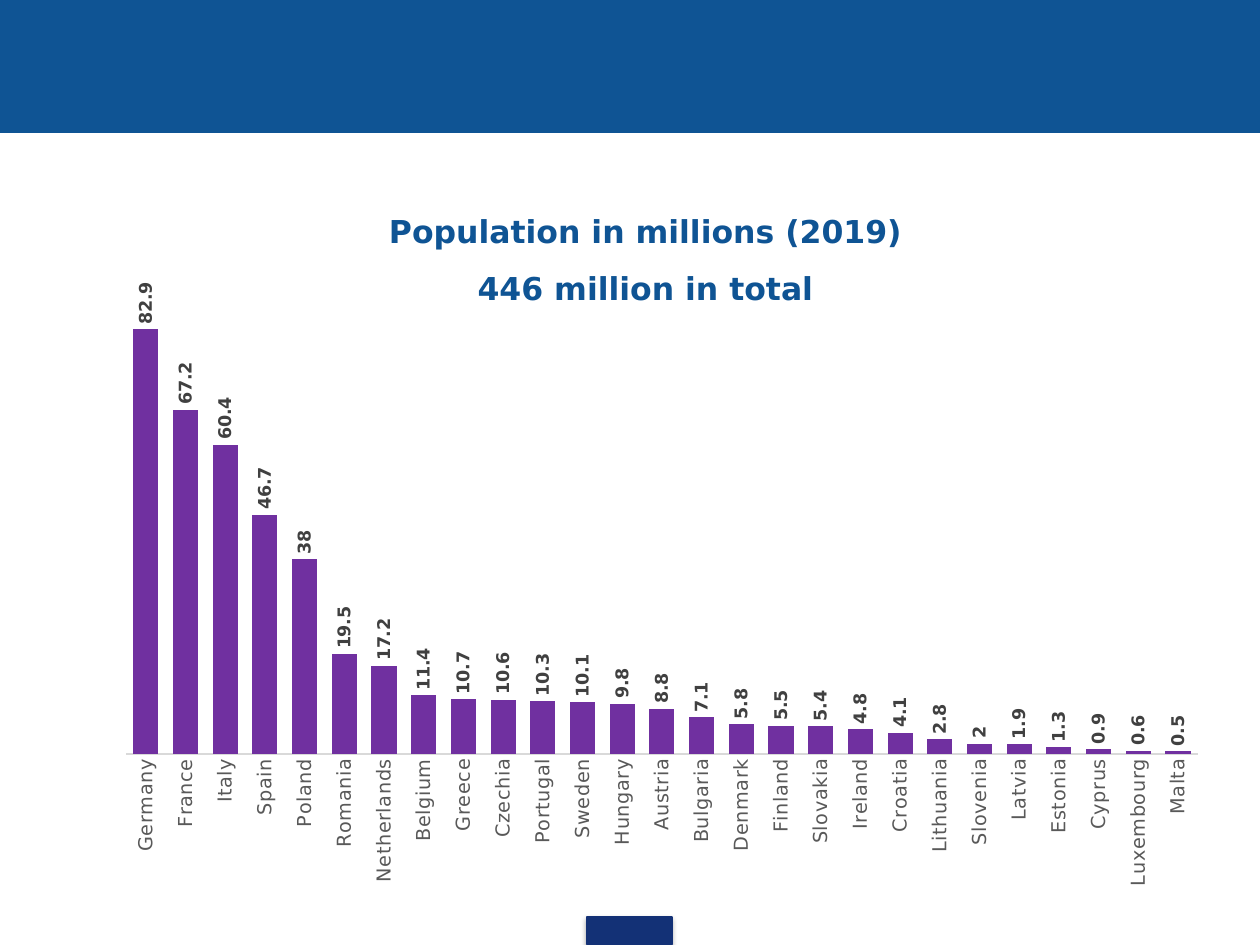
from lxml.etree import SubElement
from pptx import Presentation
from pptx.chart.data import CategoryChartData
from pptx.dml.color import RGBColor
from pptx.enum.chart import XL_CHART_TYPE as ChartType
from pptx.enum.chart import XL_LABEL_POSITION as LabelPosition
from pptx.enum.chart import XL_TICK_MARK as TickMark
from pptx.enum.shapes import MSO_SHAPE as Shape
from pptx.enum.text import MSO_ANCHOR as Anchor
from pptx.enum.text import PP_ALIGN as Align
from pptx.oxml import parse_xml
from pptx.oxml.ns import nsdecls, qn
from pptx.util import Emu, Pt

PX = 914400 // 126
FONT = "DejaVu Sans"
BLUE, NAVY, PURPLE = "0F5494", "133176", "7030A0"
CHART_AREA = (103, 280, 1118, 616)
PLOT_AREA = (126, 293, 1072, 461)
TITLE = ("Population in millions (2019)", "446 million in total")
POPULATION = {
    "Germany": 82.9, "France": 67.2, "Italy": 60.4, "Spain": 46.7,
    "Poland": 38, "Romania": 19.5, "Netherlands": 17.2, "Belgium": 11.4,
    "Greece": 10.7, "Czechia": 10.6, "Portugal": 10.3, "Sweden": 10.1,
    "Hungary": 9.8, "Austria": 8.8, "Bulgaria": 7.1, "Denmark": 5.8,
    "Finland": 5.5, "Slovakia": 5.4, "Ireland": 4.8, "Croatia": 4.1,
    "Lithuania": 2.8, "Slovenia": 2, "Latvia": 1.9, "Estonia": 1.3,
    "Cyprus": 0.9, "Luxembourg": 0.6, "Malta": 0.5,
}


def px(*lengths):
    """Turn pixel lengths into EMU."""
    return [Emu(length * PX) for length in lengths]


def color(value):
    """Turn a hex string into a colour."""
    return RGBColor.from_string(value)


def apply(target, **values):
    """Set each given attribute on the target."""
    for name, value in values.items():
        setattr(target, name, value)


def style_font(font, size, fill, bold=False):
    """Give a font the deck's typeface, a size, a colour and a weight."""
    apply(font, name=FONT, size=Pt(size), bold=bold)
    font.color.rgb = color(fill)


def add_block(page, bounds, fill):
    """Add a plain filled rectangle."""
    block = page.shapes.add_shape(Shape.RECTANGLE, *px(*bounds))
    block.shadow.inherit = False
    block.fill.solid()
    block.fill.fore_color.rgb = color(fill)
    block.line.color.rgb = color(fill)
    block.line.width = Pt(0.75)
    return block


def add_shadow(block):
    """Cast a soft black shadow below a block."""
    effects = block.fill._xPr.find(qn("a:effectLst"))
    effects.append(parse_xml(
        f'<a:outerShdw {nsdecls("a")} blurRad="{Pt(3.1)}" dist="{Pt(1.8)}" '
        'dir="5400000" rotWithShape="0"><a:srgbClr val="000000">'
        '<a:alpha val="35000"/></a:srgbClr></a:outerShdw>'))


def add_title(page, bounds, lines):
    """Add the centred heading, one paragraph per line."""
    box = page.shapes.add_textbox(*px(*bounds))
    frame = box.text_frame
    apply(frame, word_wrap=True, vertical_anchor=Anchor.MIDDLE,
          margin_top=0, margin_bottom=0)
    for index, line in enumerate(lines):
        para = frame.add_paragraph() if index else frame.paragraphs[0]
        apply(para, alignment=Align.CENTER, line_spacing=1.5)
        para._p.get_or_add_pPr().set("marL", str(px(49)[0]))
        span = para.add_run()
        span.text = line
        style_font(span.font, 18, BLUE, True)


def rotate_text(element):
    """Turn chart text to read upwards."""
    body = element.find(qn("c:txPr")).find(qn("a:bodyPr"))
    for name, value in {"rot": "-5400000", "vert": "horz"}.items():
        body.set(name, value)


def place_plot(chart):
    """Fix the inner plot area inside the chart."""
    plot_area = chart._chartSpace.chart.plotArea
    for old in plot_area.findall(qn("c:layout")):
        plot_area.remove(old)
    layout = parse_xml(f'<c:layout {nsdecls("c")}/>')
    plot_area.insert(0, layout)
    manual = SubElement(layout, qn("c:manualLayout"))
    left, top, width, height = CHART_AREA
    x, y, w, h = PLOT_AREA
    values = {"layoutTarget": "inner", "xMode": "edge", "yMode": "edge",
              "x": (x - left) / width, "y": (y - top) / height,
              "w": w / width, "h": h / height}
    for name, value in values.items():
        SubElement(manual, qn(f"c:{name}")).set("val", str(value))


def style_axes(chart):
    """Show only the country axis, with upright names."""
    apply(chart.value_axis, visible=False, has_major_gridlines=False,
          minimum_scale=0, maximum_scale=90)
    axis = chart.category_axis
    apply(axis, major_tick_mark=TickMark.NONE, minor_tick_mark=TickMark.NONE)
    axis.format.line.color.rgb = color("D9D9D9")
    axis.format.line.width = Pt(0.75)
    style_font(axis.tick_labels.font, 11, "595959")
    rotate_text(axis._element)
    for properties in axis._element.iter(qn("a:defRPr")):
        properties.set("spc", "20")


def add_population_chart(page):
    """Add the column chart of population by country."""
    data = CategoryChartData()
    data.categories = list(POPULATION)
    data.add_series("Series 1", list(POPULATION.values()))
    chart = page.shapes.add_chart(
        ChartType.COLUMN_CLUSTERED, *px(*CHART_AREA), data).chart
    apply(chart, has_legend=False, has_title=False)
    style_font(chart.font, 10, "000000")
    plot = chart.plots[0]
    apply(plot, gap_width=58, overlap=-27, vary_by_categories=False)
    series = plot.series[0]
    series.format.fill.solid()
    series.format.fill.fore_color.rgb = color(PURPLE)
    labels = series.data_labels
    apply(labels, show_value=True, position=LabelPosition.OUTSIDE_END)
    style_font(labels.font, 10, "404040", True)
    rotate_text(labels._element)
    style_axes(chart)
    place_plot(chart)


def main():
    """Build the population slide and save it."""
    deck = Presentation()
    deck.slide_width, deck.slide_height = px(1260, 945)
    page = deck.slides.add_slide(deck.slide_layouts[6])
    add_block(page, (0, 0, 1260, 132), BLUE)
    add_shadow(add_block(page, (587, 917, 85, 28), NAVY))
    add_title(page, (54, 195, 1134, 110), TITLE)
    add_population_chart(page)
    deck.save("out.pptx")


if __name__ == "__main__":
    main()
